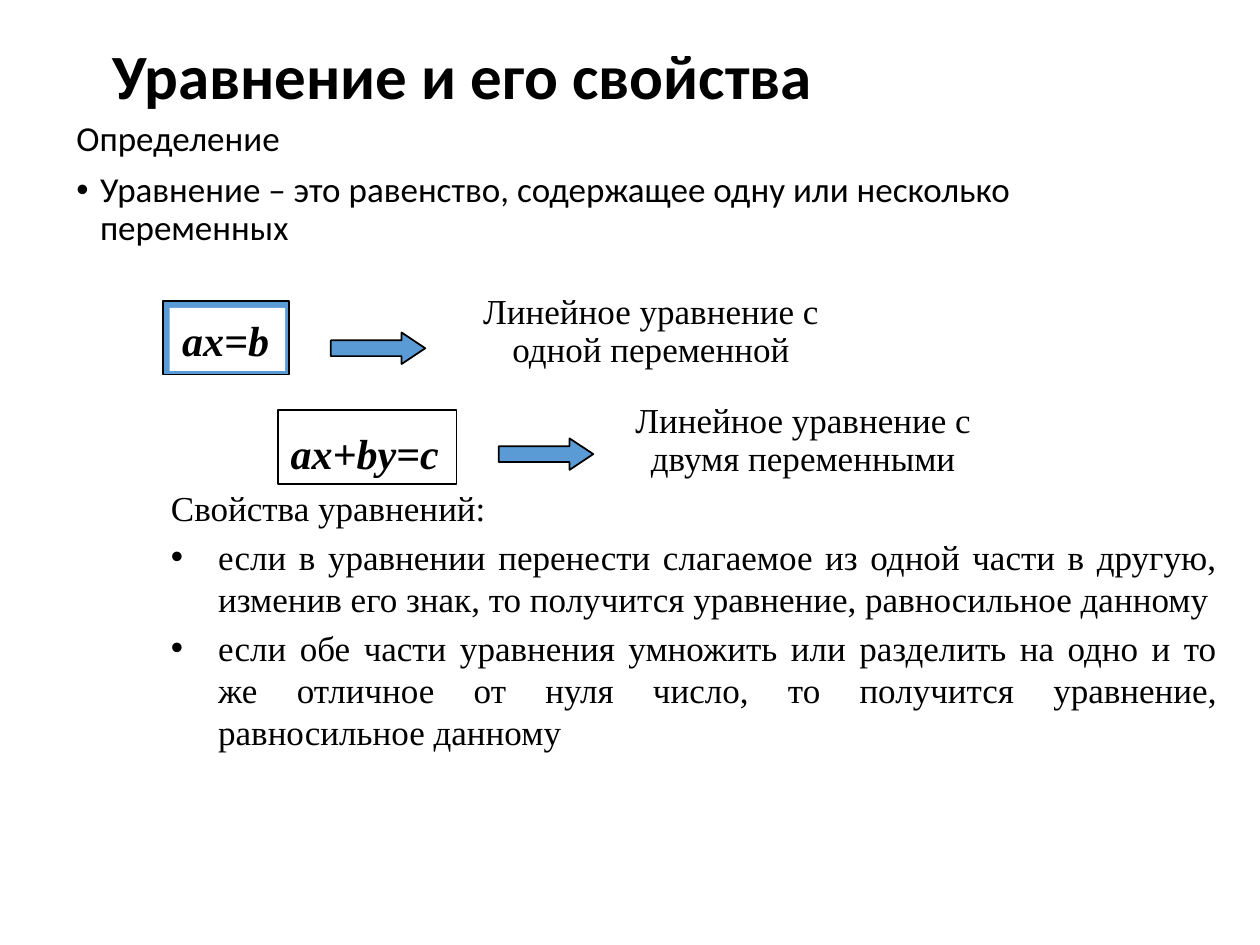
from lxml.etree import SubElement
from pptx import Presentation
from pptx.dml.color import RGBColor
from pptx.enum.shapes import MSO_SHAPE as Shape
from pptx.enum.text import MSO_ANCHOR as Anchor, PP_ALIGN as Align
from pptx.oxml.ns import qn
from pptx.util import Pt

BLACK = RGBColor(0, 0, 0)
WHITE = RGBColor(255, 255, 255)
BLUE = RGBColor(0x5B, 0x9B, 0xD5)
SANS = "Calibri"
SERIF = "Times New Roman"


def add_shape(page, kind, place, fill, outlined=True):
    shape = page.shapes.add_shape(kind, *map(Pt, place))
    shape.shadow.inherit = False
    shape.fill.solid()
    shape.fill.fore_color.rgb = fill
    if outlined:
        shape.line.color.rgb = BLACK
        shape.line.width = Pt(1)
    else:
        shape.line.fill.background()
    return shape


def add_arrow(page, left, top):
    arrow = add_shape(page, Shape.RIGHT_ARROW, (left, top, 54, 18), BLUE)
    arrow.adjustments[0] = 0.5
    arrow.adjustments[1] = 0.75


def set_indent(para, indent, bullet):
    properties = para._p.get_or_add_pPr()
    properties.set("marL", str(Pt(indent)))
    properties.set("indent", str(-Pt(indent)))
    if bullet:
        SubElement(properties, qn("a:buFont"), typeface="Arial")
        SubElement(properties, qn("a:buChar"), char="•")


def write(box, *lines, font=SERIF, size=20, bold=False, italic=False,
          align=Align.LEFT, anchor=Anchor.TOP, spacing=None, before=0,
          indent=0, heading=False):
    frame = box.text_frame
    frame.word_wrap = True
    frame.vertical_anchor = anchor
    for index, line in enumerate(lines):
        is_heading = heading and index == 0
        para = frame.paragraphs[0] if index == 0 else frame.add_paragraph()
        para.alignment = Align.LEFT if is_heading else align
        para.space_before = Pt(before)
        if spacing:
            para.line_spacing = spacing
        if indent:
            set_indent(para, indent, not is_heading)
        span = para.add_run()
        span.text = line
        span.font.name = font
        span.font.size = Pt(size)
        span.font.bold = bold
        span.font.italic = italic
        span.font.color.rgb = BLACK


def add_text(page, place, *lines, **text_format):
    box = page.shapes.add_textbox(*map(Pt, place))
    write(box, *lines, **text_format)


def add_caption(page, left, top, *lines):
    add_text(page, (left, top, 210, 79), *lines,
             align=Align.CENTER, spacing=0.5, before=10)


def main():
    deck = Presentation()
    deck.slide_width, deck.slide_height = Pt(720), Pt(540)
    page = deck.slides.add_slide(deck.slide_layouts[6])

    add_text(page, (57, 0, 612, 90), "Уравнение и его свойства",
             font=SANS, size=36, bold=True, anchor=Anchor.MIDDLE, spacing=0.9)
    add_text(page, (36.6, 66, 612, 102), "Определение",
             "Уравнение – это равенство, содержащее одну или несколько переменных",
             font=SANS, spacing=0.9, before=7.5, indent=13.5, heading=True)

    formula = {"size": 24, "bold": True, "italic": True}
    add_shape(page, Shape.RECTANGLE, (93, 172, 72, 42), BLUE)
    panel = add_shape(page, Shape.RECTANGLE, (97, 176, 66, 36), WHITE, outlined=False)
    write(panel, "ax=b", **formula)
    add_shape(page, Shape.RECTANGLE, (159, 234.5, 102, 42), WHITE)
    add_text(page, (159, 240.5, 114, 36), "ax+by=c", **formula)

    add_caption(page, 267, 172, "Линейное уравнение с", "одной переменной")
    add_caption(page, 354, 234.5, "Линейное уравнение с", "двумя переменными")
    add_arrow(page, 189, 190)
    add_arrow(page, 285, 250.5)

    add_text(page, (90.6, 274.5, 612, 168), "Свойства уравнений:",
             "если в уравнении перенести слагаемое из одной части в другую, "
             "изменив его знак, то получится уравнение, равносильное данному",
             "если обе части уравнения умножить или разделить на одно и то же "
             "отличное от нуля число, то получится уравнение, равносильное данному",
             align=Align.JUSTIFY, before=4, indent=27, heading=True)

    deck.save("out.pptx")


if __name__ == "__main__":
    main()
